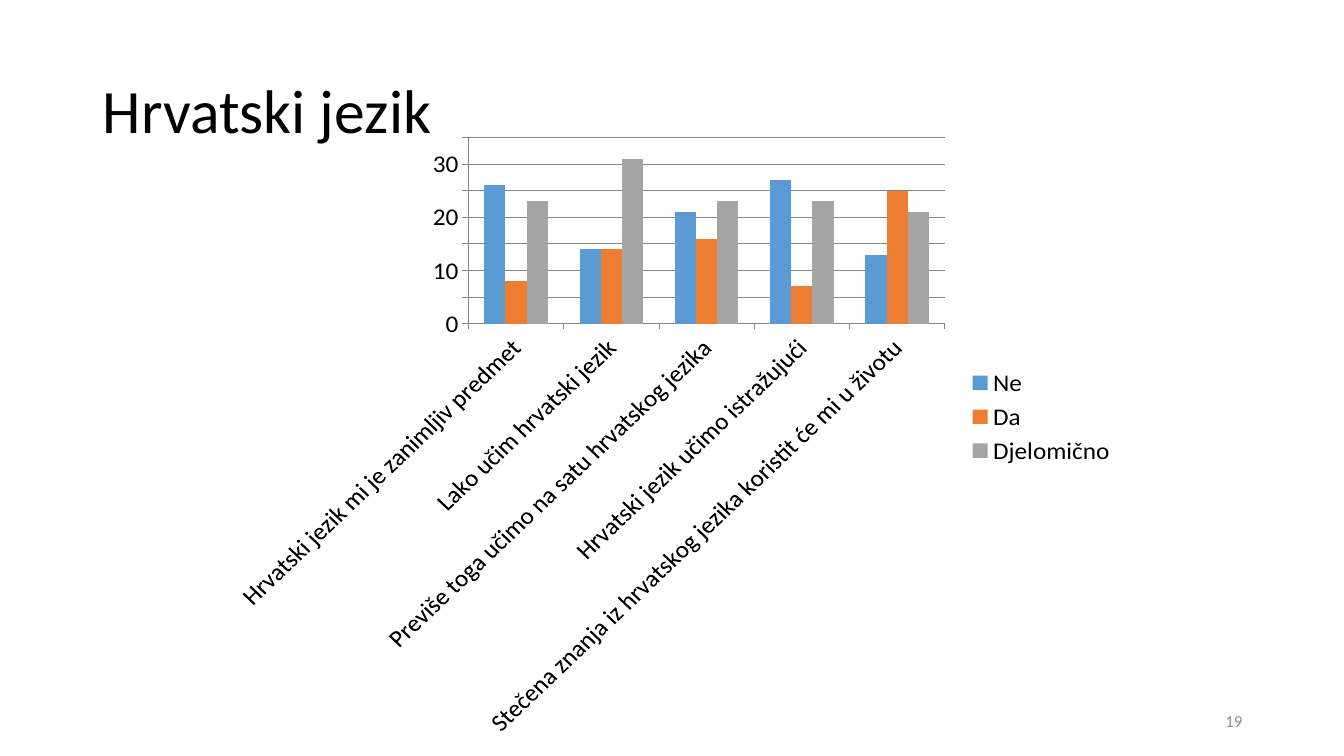
from pptx import Presentation
from pptx.chart.data import CategoryChartData
from pptx.dml.color import RGBColor
from pptx.enum.chart import XL_CHART_TYPE, XL_LEGEND_POSITION, XL_TICK_MARK
from pptx.enum.text import MSO_ANCHOR, PP_ALIGN
from pptx.util import Inches, Pt

# Content
TITLE = "Hrvatski jezik"
PAGE_NUMBER = "19"
STATEMENTS = [
    "Hrvatski jezik mi je zanimljiv predmet",
    "Lako učim hrvatski jezik",
    "Previše toga učimo na satu hrvatskog jezika",
    "Hrvatski jezik učimo istražujući",
    "Stečena znanja iz hrvatskog jezika koristit će mi u životu",
]
ANSWERS = [
    ("Ne", "5B9BD5", (26, 14, 21, 27, 13)),
    ("Da", "ED7D31", (8, 14, 16, 7, 25)),
    ("Djelomično", "A5A5A5", (23, 31, 23, 23, 21)),
]

# Places in inches
SLIDE_SIZE = (13.33, 7.5)
TITLE_BOX = (0.92, 0.4, 11.5, 1.45)
CHART_BOX = (2.17, 1.25, 9, 6.06)
NUMBER_BOX = (9.42, 6.95, 3, 0.4)
FONT, BLACK, AXIS_GREY, NUMBER_GREY = "Calibri", "000000", "868686", "8C8C8C"


def color(value):
    return RGBColor.from_string(value)


def style_font(font, size, value):
    font.name, font.size = FONT, Pt(size)
    font.color.rgb = color(value)


def fill_text(shape, text, size, value, align):
    frame = shape.text_frame
    frame.word_wrap = True
    frame.vertical_anchor = MSO_ANCHOR.MIDDLE
    frame.text = text
    para = frame.paragraphs[0]
    para.alignment = align
    style_font(para.runs[0].font, size, value)
    return para


deck = Presentation()
deck.slide_width, deck.slide_height = map(Inches, SLIDE_SIZE)
page = deck.slides.add_slide(deck.slide_layouts[5])

# Title
title = page.shapes.title
title.left, title.top, title.width, title.height = map(Inches, TITLE_BOX)
fill_text(title, TITLE, 44, BLACK, PP_ALIGN.LEFT).line_spacing = 0.9

# Chart
data = CategoryChartData()
data.categories = STATEMENTS
for name, _, values in ANSWERS:
    data.add_series(name, values)
chart = page.shapes.add_chart(
    XL_CHART_TYPE.COLUMN_CLUSTERED, *map(Inches, CHART_BOX), data).chart
chart.has_title = False
style_font(chart.font, 18, BLACK)
plot = chart.plots[0]
plot.gap_width, plot.overlap, plot.vary_by_categories = 150, 0, False
for series, (_, value, _) in zip(plot.series, ANSWERS):
    series.format.fill.solid()
    series.format.fill.fore_color.rgb = color(value)

# Axes
value_axis, category_axis = chart.value_axis, chart.category_axis
value_axis.minimum_scale, value_axis.maximum_scale, value_axis.major_unit = 0, 35, 5
value_axis.has_major_gridlines = True
for axis in (value_axis, category_axis):
    axis.major_tick_mark = XL_TICK_MARK.OUTSIDE
for lines in (value_axis, category_axis, value_axis.major_gridlines):
    lines.format.line.color.rgb = color(AXIS_GREY)
    lines.format.line.width = Pt(0.75)

# Legend
chart.has_legend = True
chart.legend.position = XL_LEGEND_POSITION.RIGHT
chart.legend.include_in_layout = False

# Page number
number = page.shapes.add_textbox(*map(Inches, NUMBER_BOX))
fill_text(number, PAGE_NUMBER, 12, NUMBER_GREY, PP_ALIGN.RIGHT)

deck.save("out.pptx")
